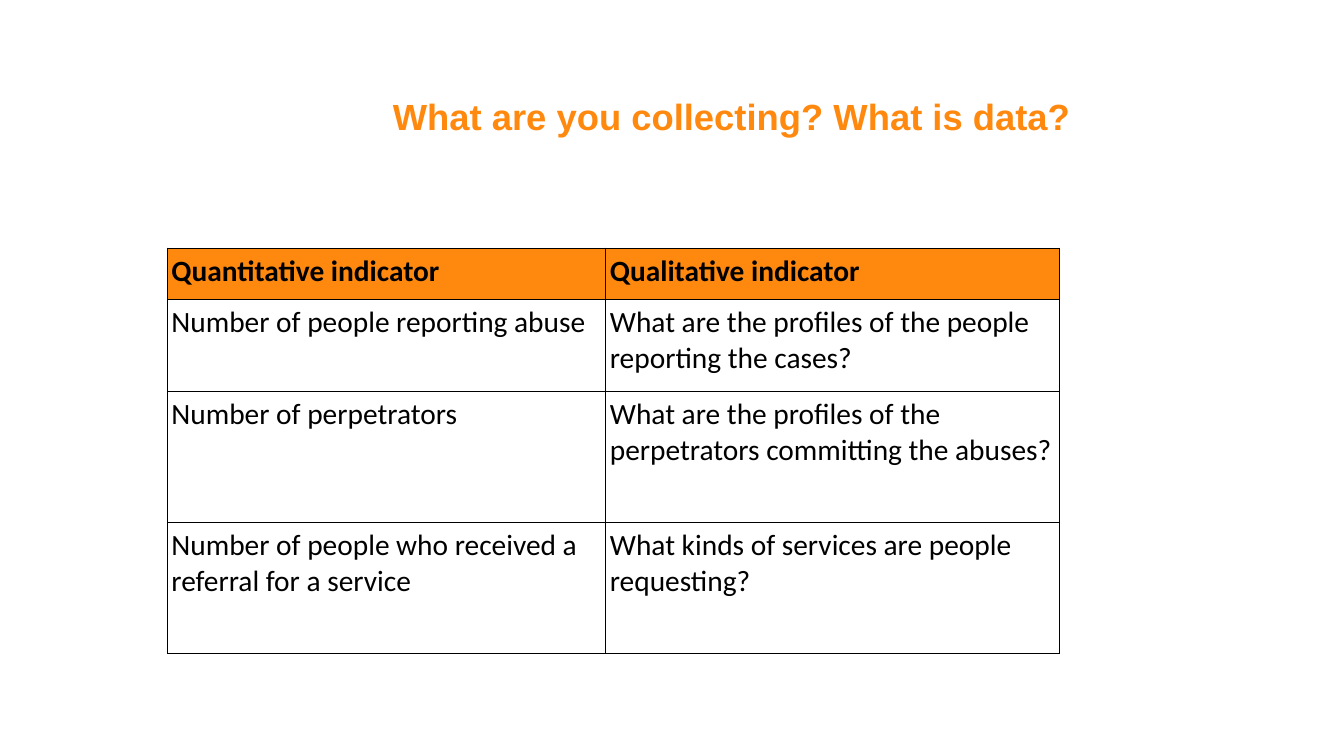
from dataclasses import dataclass

from lxml import etree
from pptx import Presentation
from pptx import util as u
from pptx.dml.color import RGBColor
from pptx.enum import text
from pptx.oxml.ns import qn

ORANGE = "FF890E"
BLACK = "000000"


@dataclass
class Row:
    tall: float
    cells: tuple[str, str]
    head: bool = False


WIDTHS = (11.05, 11.43)
ROWS = [
    Row(1.3, ("Quantitative indicator", "Qualitative indicator"), True),
    Row(2.31, ("Number of people reporting abuse",
               "What are the profiles of the people reporting the cases?")),
    Row(3.3, ("Number of perpetrators",
              "What are the profiles of the perpetrators committing the abuses?")),
    Row(3.3, ("Number of people who received a referral for a service",
              "What kinds of services are people requesting?")),
]


def color(code: str) -> RGBColor:
    return RGBColor.from_string(code)


def style(frame, face: str, size: float, code: str, bold: bool) -> None:
    for run in frame.paragraphs[0].runs:
        run.font.name = face
        run.font.size = u.Pt(size)
        run.font.bold = bold
        run.font.color.rgb = color(code)


def border(cell) -> None:
    props = cell._tc.get_or_add_tcPr()
    for side in ("lnL", "lnR", "lnT", "lnB"):
        line = etree.SubElement(props, qn(f"a:{side}"), w=str(u.Pt(0.75)))
        fill = etree.SubElement(line, qn("a:solidFill"))
        etree.SubElement(fill, qn("a:srgbClr"), val=BLACK)


def fill_cell(cell, words: str, head: bool) -> None:
    cell.margin_left = cell.margin_right = u.Cm(0.1)
    cell.margin_top = cell.margin_bottom = u.Cm(0.13)
    border(cell)
    if head:
        cell.fill.solid()
        cell.fill.fore_color.rgb = color(ORANGE)
    else:
        cell.fill.background()
    cell.text_frame.text = words
    style(cell.text_frame, "Calibri", 21, BLACK, head)


def add_title(slide) -> None:
    box = slide.shapes.add_textbox(u.Cm(9.9), u.Cm(1.3), u.Cm(17.53), u.Cm(3.4))
    frame = box.text_frame
    frame.word_wrap = True
    frame.vertical_anchor = text.MSO_ANCHOR.MIDDLE
    frame.margin_left = frame.margin_right = 0
    frame.margin_top = frame.margin_bottom = 0
    frame.text = "What are you collecting? What is data?"
    frame.paragraphs[0].line_spacing = 0.9
    style(frame, "Arial", 26, ORANGE, True)


def add_grid(slide) -> None:
    tall = sum(row.tall for row in ROWS)
    table = slide.shapes.add_table(
        len(ROWS), len(WIDTHS), u.Cm(4.22), u.Cm(6.25),
        u.Cm(sum(WIDTHS)), u.Cm(tall)).table
    table.first_row = table.horz_banding = False
    for col, width in zip(table.columns, WIDTHS):
        col.width = u.Cm(width)
    for i, row in enumerate(ROWS):
        table.rows[i].height = u.Cm(row.tall)
        for j, words in enumerate(row.cells):
            fill_cell(table.cell(i, j), words, row.head)


def main() -> None:
    deck = Presentation()
    deck.slide_width, deck.slide_height = u.Cm(33.87), u.Cm(19.05)
    slide = deck.slides.add_slide(deck.slide_layouts[6])

    # Heading
    add_title(slide)

    # Indicator table
    add_grid(slide)

    deck.save("out.pptx")


if __name__ == "__main__":
    main()
